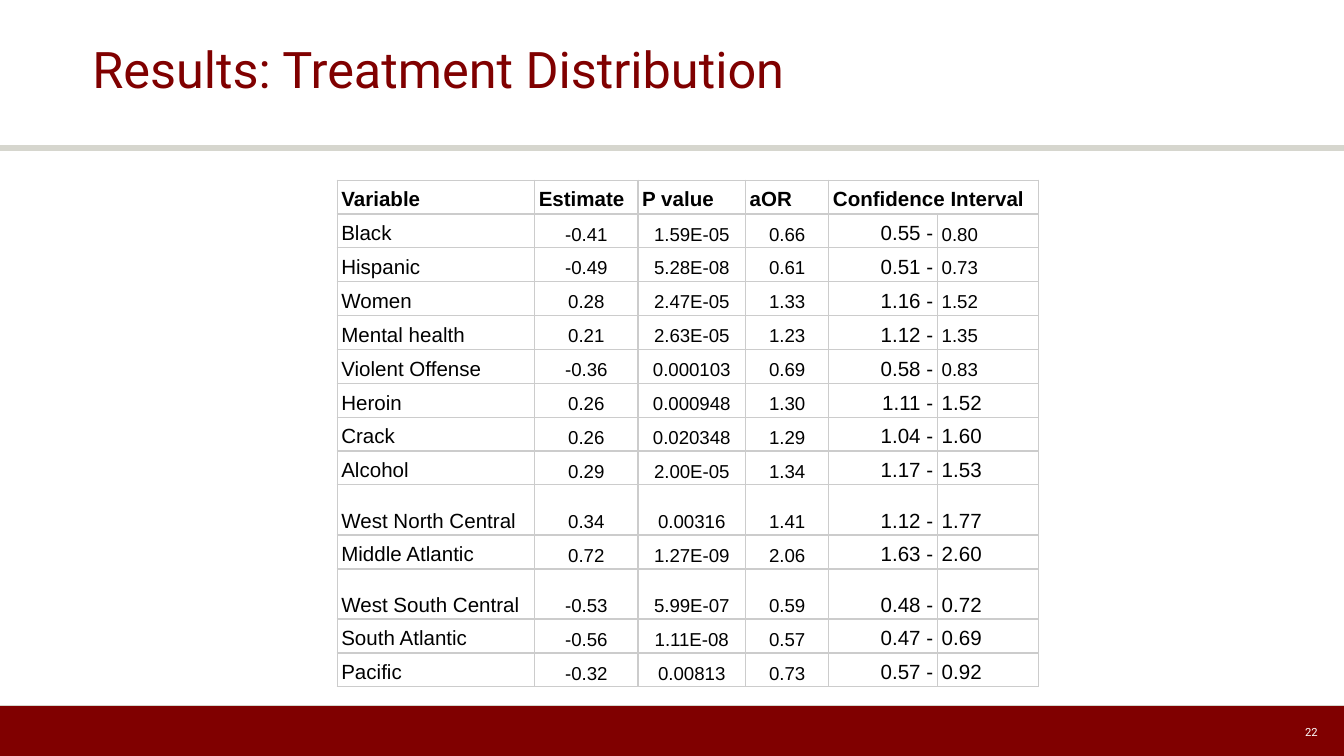
from pptx import Presentation
from pptx.dml.color import RGBColor
from pptx.enum.shapes import MSO_CONNECTOR, MSO_SHAPE
from pptx.enum.text import MSO_ANCHOR, PP_ALIGN
from pptx.oxml.ns import qn
from pptx.util import Pt
from lxml import etree

LEFT, CENTER, RIGHT = PP_ALIGN.LEFT, PP_ALIGN.CENTER, PP_ALIGN.RIGHT
MIDDLE, BOTTOM = MSO_ANCHOR.MIDDLE, MSO_ANCHOR.BOTTOM
RECTANGLE, STRAIGHT = MSO_SHAPE.RECTANGLE, MSO_CONNECTOR.STRAIGHT

MAROON = RGBColor(0x80, 0x00, 0x00)
WHITE = RGBColor(0xFF, 0xFF, 0xFF)
BLACK = RGBColor(0x00, 0x00, 0x00)
RULE_GRAY = RGBColor(0xD6, 0xD6, 0xCE)
GRID_GRAY = RGBColor(0xCC, 0xCC, 0xCC)

# Content
TITLE = "Results: Treatment Distribution"
PAGE_NUMBER = "22"
HEADERS = ["Variable", "Estimate", "P value", "aOR", "Confidence Interval"]
ROWS = [
    ("Black", "-0.41", "1.59E-05", "0.66", "0.55 -", "0.80"),
    ("Hispanic", "-0.49", "5.28E-08", "0.61", "0.51 -", "0.73"),
    ("Women", "0.28", "2.47E-05", "1.33", "1.16 -", "1.52"),
    ("Mental health", "0.21", "2.63E-05", "1.23", "1.12 -", "1.35"),
    ("Violent Offense", "-0.36", "0.000103", "0.69", "0.58 -", "0.83"),
    ("Heroin", "0.26", "0.000948", "1.30", "1.11 -", "1.52"),
    ("Crack", "0.26", "0.020348", "1.29", "1.04 -", "1.60"),
    ("Alcohol", "0.29", "2.00E-05", "1.34", "1.17 -", "1.53"),
    ("West North Central", "0.34", "0.00316", "1.41", "1.12 -", "1.77"),
    ("Middle Atlantic", "0.72", "1.27E-09", "2.06", "1.63 -", "2.60"),
    ("West South Central", "-0.53", "5.99E-07", "0.59", "0.48 -", "0.72"),
    ("South Atlantic", "-0.56", "1.11E-08", "0.57", "0.47 -", "0.69"),
    ("Pacific", "-0.32", "0.00813", "0.73", "0.57 -", "0.92"),
]
TALL_ROWS = {"West North Central", "West South Central"}
SMALL_UPPER_BOUNDS = {"Black", "Hispanic", "Women", "Mental health", "Violent Offense"}

# Layout in points
SLIDE_WIDTH, SLIDE_HEIGHT = 720, 405
FOOTER_TOP = 378
TABLE_LEFT, TABLE_TOP = 180.6, 96.5
COLUMN_WIDTHS = [105.8, 55.4, 57.6, 44.6, 58.3, 54]
COLUMN_ALIGNMENTS = [LEFT, CENTER, CENTER, CENTER, RIGHT, LEFT]
COLUMN_SIZES = [11, 10, 10, 10, 11, 11]
ROW_HEIGHT, TALL_ROW_HEIGHT = 17.1, 26.9


def set_margins(target, horizontal, vertical):
    target.margin_left = target.margin_right = Pt(horizontal)
    target.margin_top = target.margin_bottom = Pt(vertical)


def write(paragraph, text, font_name, size, color, alignment=LEFT, bold=False):
    paragraph.alignment = alignment
    run = paragraph.add_run()
    run.text = text
    run.font.name = font_name
    run.font.size = Pt(size)
    run.font.bold = bold
    run.font.color.rgb = color


def add_rule(slide, top, width):
    rule = slide.shapes.add_connector(STRAIGHT, 0, Pt(top), Pt(SLIDE_WIDTH), Pt(top))
    rule.line.color.rgb = RULE_GRAY
    rule.line.width = Pt(width)
    etree.SubElement(rule._element.spPr, qn("a:effectLst"))


def add_borders(cell):
    properties = cell._tc.get_or_add_tcPr()
    for position, side in enumerate(("lnL", "lnR", "lnT", "lnB")):
        border = etree.Element(qn(f"a:{side}"), w=str(Pt(0.75)))
        fill = etree.SubElement(border, qn("a:solidFill"))
        etree.SubElement(fill, qn("a:srgbClr"), val=str(GRID_GRAY))
        properties.insert(position, border)


def fill_cell(cell, text, size, alignment, bold):
    cell.vertical_anchor = BOTTOM
    set_margins(cell, 2.25, 1.5)
    cell.fill.background()
    add_borders(cell)
    if text:
        paragraph = cell.text_frame.paragraphs[0]
        paragraph.line_spacing = 1.15
        write(paragraph, text, "Arial", size, BLACK, alignment, bold)


def add_results_table(slide):
    heights = [ROW_HEIGHT] + [
        TALL_ROW_HEIGHT if row[0] in TALL_ROWS else ROW_HEIGHT for row in ROWS
    ]
    table = slide.shapes.add_table(
        len(heights), len(COLUMN_WIDTHS), Pt(TABLE_LEFT), Pt(TABLE_TOP),
        Pt(sum(COLUMN_WIDTHS)), Pt(sum(heights)),
    ).table
    table.first_row = table.horz_banding = False
    for column, width in zip(table.columns, COLUMN_WIDTHS):
        column.width = Pt(width)
    for row, height in zip(table.rows, heights):
        row.height = Pt(height)

    # The last heading covers both bounds of the interval
    table.cell(0, 4).merge(table.cell(0, 5))
    for column, text in enumerate(HEADERS + [""]):
        fill_cell(table.cell(0, column), text, 11, LEFT, True)
    for row_number, row in enumerate(ROWS, start=1):
        for column, text in enumerate(row):
            size = COLUMN_SIZES[column]
            if column == 5 and row[0] in SMALL_UPPER_BOUNDS:
                size = 10
            fill_cell(table.cell(row_number, column), text, size,
                      COLUMN_ALIGNMENTS[column], False)


def main():
    presentation = Presentation()
    presentation.slide_width = Pt(SLIDE_WIDTH)
    presentation.slide_height = Pt(SLIDE_HEIGHT)
    slide = presentation.slides.add_slide(presentation.slide_layouts[5])
    slide.background.fill.solid()
    slide.background.fill.fore_color.rgb = WHITE

    # Title
    title = slide.shapes.title
    title.left, title.top, title.width, title.height = Pt(49.5), 0, Pt(621), Pt(77.8)
    frame = title.text_frame
    frame.word_wrap = True
    frame.vertical_anchor = MIDDLE
    set_margins(frame, 0, 2.7)
    frame.paragraphs[0].line_spacing = 0.9
    write(frame.paragraphs[0], TITLE, "Roboto", 27, MAROON)

    # Header rule and footer band
    add_rule(slide, 79.2, 3)
    footer = slide.shapes.add_shape(
        RECTANGLE, 0, Pt(FOOTER_TOP), Pt(SLIDE_WIDTH), Pt(SLIDE_HEIGHT - FOOTER_TOP))
    footer.shadow.inherit = False
    footer.fill.solid()
    footer.fill.fore_color.rgb = MAROON
    footer.line.fill.background()
    add_rule(slide, FOOTER_TOP, 0.75)

    # Page number
    number_box = slide.shapes.add_textbox(Pt(508.5), Pt(381.6), Pt(202.8), Pt(21.6))
    frame = number_box.text_frame
    frame.word_wrap = True
    frame.vertical_anchor = MIDDLE
    set_margins(frame, 5.4, 2.7)
    write(frame.paragraphs[0], PAGE_NUMBER, "Roboto", 6, WHITE, RIGHT)

    add_results_table(slide)
    presentation.save("out.pptx")


if __name__ == "__main__":
    main()
